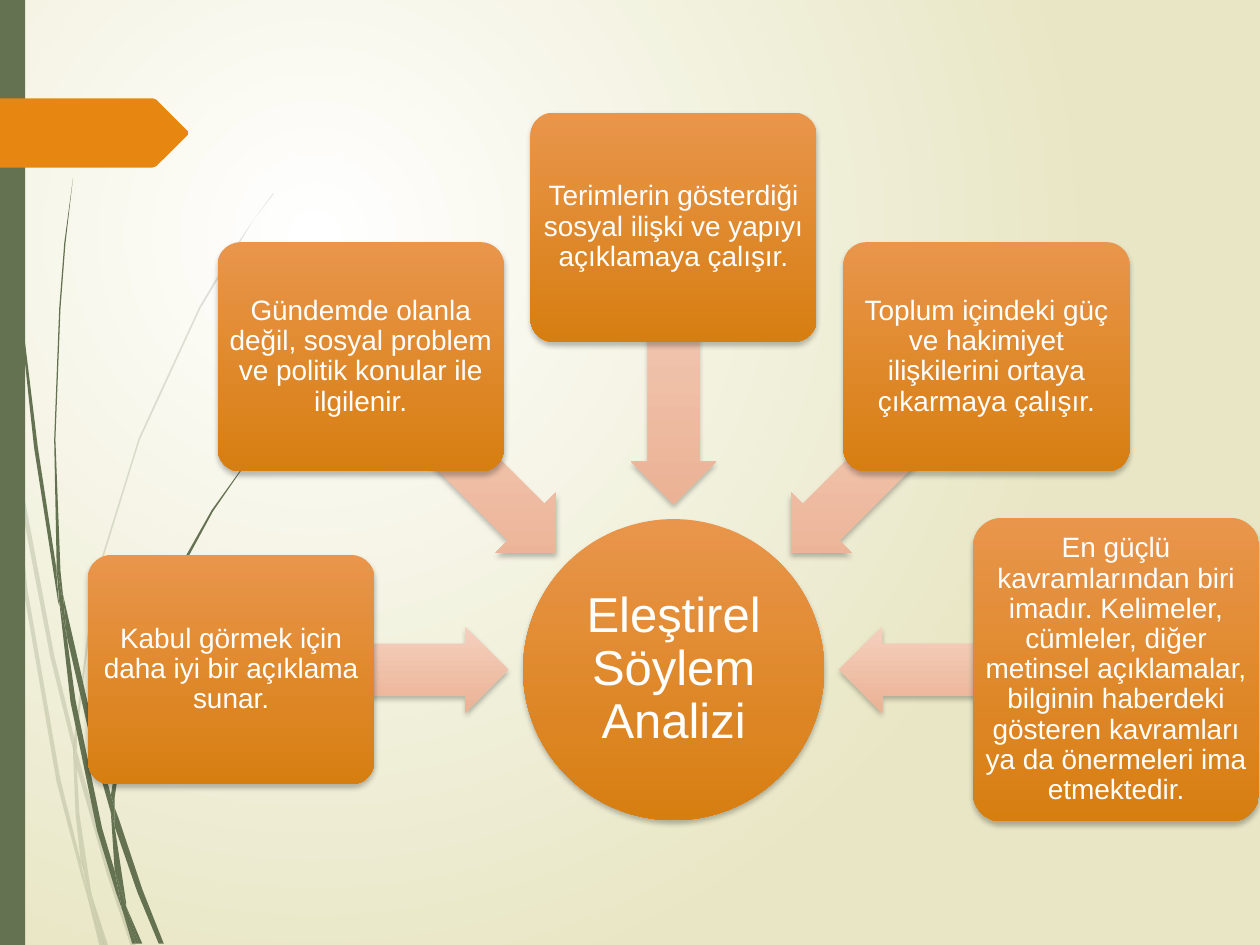
from math import cos, radians, sin

from lxml.etree import SubElement
from pptx import Presentation
from pptx.dml.color import RGBColor
from pptx.enum.shapes import MSO_SHAPE as Shape
from pptx.enum.text import MSO_ANCHOR as Anchor, PP_ALIGN as Align
from pptx.oxml.ns import qn
from pptx.util import Cm, Pt

WHITE = RGBColor(0xFF, 0xFF, 0xFF)
CREAM = RGBColor(0xE8, 0xE6, 0xC4)
GREEN = RGBColor(0x64, 0x72, 0x52)
ORANGE = RGBColor(0xE7, 0x87, 0x12)
BOX_COLORS = RGBColor(0xE9, 0x95, 0x4B), RGBColor(0xD7, 0x7E, 0x11)
ARROW_COLORS = RGBColor(0xF4, 0xD0, 0xBE), RGBColor(0xEB, 0xB2, 0x95)

FONT = "Arial"
HUB_X, HUB_Y, HUB_SIZE = 13.58, 13.5, 6.07
BOX_RADIUS, ARROW_RADIUS = 8.92, 6.12
BOX_W, BOX_H, TALL_BOX_H = 5.77, 4.62, 6.12
ARROW_W, ARROW_H = 5.56, 1.73
GRID = Cm(2.54) / 100

SPOKES = [
    (180, BOX_H, "Kabul görmek için daha iyi bir açıklama sunar."),
    (225, BOX_H, "Gündemde olanla değil, sosyal problem ve politik konular ile ilgilenir."),
    (270, BOX_H, "Terimlerin gösterdiği sosyal ilişki ve yapıyı açıklamaya çalışır."),
    (315, BOX_H, "Toplum içindeki güç ve hakimiyet ilişkilerini ortaya çıkarmaya çalışır."),
    (0, TALL_BOX_H, "En güçlü kavramlarından biri imadır. Kelimeler, cümleler, diğer "
     "metinsel açıklamalar, bilginin haberdeki gösteren kavramları ya da önermeleri "
     "ima etmektedir."),
]

PALE_BLADES = [
    [(8, 350), (6, 322), (0, 282), (0, 299), (7, 344)],
    [(40, 522), (59, 599), (59, 586), (43, 520), (10, 345), (12, 376)],
    [(64, 607), (61, 596), (61, 610), (85, 694), (104, 751), (108, 751), (88, 692)],
    [(83, 751), (86, 751), (73, 711)],
    [(64, 683), (48, 619), (22, 469), (12, 376), (8, 350), (19, 470), (45, 621),
     (64, 693), (70, 714), (69, 707)],
    [(58, 599), (60, 646), (64, 683), (67, 692), (73, 711), (72, 706), (63, 646),
     (61, 610), (61, 608)],
    [(61, 584), (76, 462), (111, 349), (159, 245), (187, 198), (201, 175), (217, 154),
     (217, 153), (201, 175), (186, 197), (158, 244), (110, 348), (75, 461), (59, 584),
     (59, 586), (61, 596)],
    [(70, 714), (79, 751), (82, 751)],
    [(61, 608), (61, 610), (61, 596), (59, 586), (58, 599)],
    [(67, 692), (65, 683), (69, 707), (70, 714), (82, 751), (83, 751), (73, 711)],
]

DARK_BLADES = [
    [(5, 110), (14, 233), (27, 355), (46, 477), (47, 481), (45, 457), (45, 453),
     (30, 355), (15, 232), (6, 109), (4, 48), (3, 0), (2, 0), (3, 48)],
    [(73, 592), (88, 645), (88, 633), (88, 631), (77, 590), (50, 472), (53, 505)],
    [(94, 649), (91, 641), (91, 656), (109, 708), (126, 749), (130, 749), (113, 706)],
    [(91, 691), (81, 657), (60, 556), (53, 505), (47, 477), (56, 557), (77, 659),
     (92, 708), (97, 722), (96, 717)],
    [(50, 472), (48, 453), (44, 349), (48, 245), (52, 193), (58, 141), (51, 193),
     (47, 245), (43, 349), (45, 449), (49, 472)],
    [(110, 749), (113, 749), (100, 719)],
    [(47, 477), (53, 505), (50, 472), (49, 472), (45, 449), (45, 453)],
    [(91, 633), (103, 552), (131, 476), (169, 406), (191, 374), (203, 359), (216, 344),
     (215, 344), (203, 358), (191, 373), (168, 405), (129, 474), (101, 551), (88, 631),
     (91, 641)],
    [(97, 722), (105, 749), (108, 749)],
    [(88, 645), (91, 691), (96, 706), (100, 719), (100, 716), (91, 656), (90, 651)],
    [(88, 645), (90, 651), (91, 656), (91, 641), (88, 631), (88, 633)],
    [(96, 706), (91, 691), (96, 717), (97, 722), (108, 749), (110, 749), (100, 719)],
]

TAG = [(149, 107), (124, 132), (121, 133), (0, 133), (0, 78), (121, 78), (124, 79),
       (149, 104)]


def set_stops(fill, colors):
    """Turn a fill into a two-colour gradient."""
    fill.gradient()
    for stop, color in zip(fill.gradient_stops, colors):
        stop.color.rgb = color


def paint_background(s):
    """Give the slide a circular gradient around its upper left."""
    set_stops(s.background.fill, (WHITE, CREAM))
    grad = next(s._element.iter(qn("a:gradFill")))
    grad.remove(grad.find(qn("a:lin")))
    circle = SubElement(grad, qn("a:path"), {"path": "circle"})
    SubElement(circle, qn("a:fillToRect"),
               {"l": "50000", "t": "50000", "r": "100000", "b": "100000"})


def paint_flat(sp, color, alpha=100):
    """Fill a shape with one colour, without outline or shadow."""
    sp.shadow.inherit = False
    sp.line.fill.background()
    sp.fill.solid()
    sp.fill.fore_color.rgb = color
    if alpha < 100:
        clr = next(sp._element.spPr.iter(qn("a:srgbClr")))
        SubElement(clr, qn("a:alpha"), {"val": str(alpha * 1000)})


def add_outline(s, points, color, alpha=100):
    """Draw a closed outline from points in hundredths of an inch."""
    builder = s.shapes.build_freeform(*points[0], scale=GRID)
    builder.add_line_segments(points[1:], close=True)
    paint_flat(builder.convert_to_shape(), color, alpha)


def add_glossy(s, kind, x, y, w, h, colors):
    """Add a shaded shape with a soft shadow, centred on x and y."""
    sp = s.shapes.add_shape(kind, Cm(x - w / 2), Cm(y - h / 2), Cm(w), Cm(h))
    sp.line.fill.background()
    set_stops(sp.fill, colors)
    sp.fill.gradient_angle = 270
    sp.shadow.inherit = False
    pr = sp._element.spPr
    pr.find(qn("a:gradFill")).set("rotWithShape", "0")
    shadow = SubElement(pr.find(qn("a:effectLst")), qn("a:outerShdw"), {
        "blurRad": str(Pt(3)), "dist": str(Pt(2)), "dir": "5400000", "rotWithShape": "0"})
    clr = SubElement(shadow, qn("a:srgbClr"), {"val": "000000"})
    SubElement(clr, qn("a:alpha"), {"val": "25000"})
    return sp


def write(sp, text, size, margin):
    """Write centred white text inside a shape."""
    tf = sp.text_frame
    tf.word_wrap = True
    tf.vertical_anchor = Anchor.MIDDLE
    tf.margin_left = tf.margin_right = tf.margin_top = tf.margin_bottom = Cm(margin)
    p = tf.paragraphs[0]
    p.alignment = Align.CENTER
    p.line_spacing = 0.9
    r = p.add_run()
    r.text = text
    r.font.name = FONT
    r.font.size = Pt(size)
    r.font.color.rgb = WHITE


def add_spoke(s, angle, height, text):
    """Add a text box around the hub and its arrow towards the hub."""
    dx, dy = cos(radians(angle)), sin(radians(angle))
    arrow = add_glossy(s, Shape.LEFT_ARROW, HUB_X + ARROW_RADIUS * dx,
                       HUB_Y + ARROW_RADIUS * dy, ARROW_W, ARROW_H, ARROW_COLORS)
    arrow.adjustments[0], arrow.adjustments[1] = 0.6, 0.5
    arrow.rotation = angle
    box = add_glossy(s, Shape.ROUNDED_RECTANGLE, HUB_X + BOX_RADIUS * dx,
                     HUB_Y + BOX_RADIUS * dy, BOX_W, height, BOX_COLORS)
    box.adjustments[0] = 0.1
    write(box, text, 16, 0.08)


def main():
    """Build the slide and save it."""
    prs = Presentation()
    prs.slide_width, prs.slide_height = Cm(25.4), Cm(19.05)
    s = prs.slides.add_slide(prs.slide_layouts[6])
    paint_background(s)
    for blade in PALE_BLADES:
        add_outline(s, blade, GREEN, 20)
    for blade in DARK_BLADES:
        add_outline(s, blade, GREEN)
    bar = s.shapes.add_shape(Shape.RECTANGLE, 0, 0, Cm(0.51), prs.slide_height)
    paint_flat(bar, GREEN)
    add_outline(s, TAG, ORANGE)
    hub = add_glossy(s, Shape.OVAL, HUB_X, HUB_Y, HUB_SIZE, HUB_SIZE, BOX_COLORS)
    write(hub, "Eleştirel Söylem Analizi", 28, 0.05)
    for angle, height, text in SPOKES:
        add_spoke(s, angle, height, text)
    prs.save("out.pptx")


if __name__ == "__main__":
    main()
